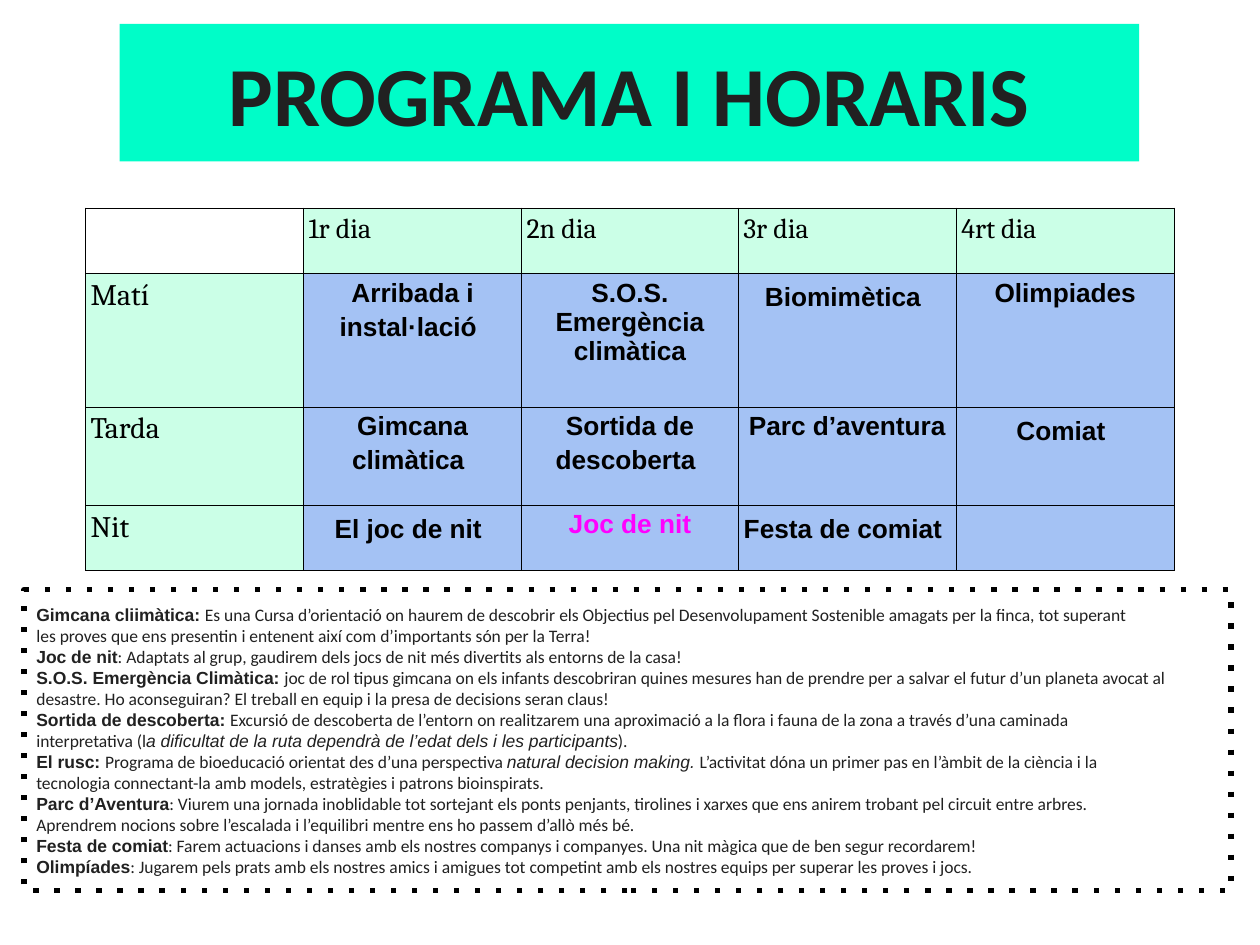
import pptx
import pptx.util
import pptx.dml.color
import pptx.enum.shapes
import pptx.enum.text
import pptx.oxml.ns
from lxml import etree

Inches = pptx.util.Inches
Pt = pptx.util.Pt
RGBColor = pptx.dml.color.RGBColor
PP_ALIGN = pptx.enum.text.PP_ALIGN
MSO_ANCHOR = pptx.enum.text.MSO_ANCHOR
RECTANGLE = pptx.enum.shapes.MSO_SHAPE.RECTANGLE
qn = pptx.oxml.ns.qn

BLACK = RGBColor(0x00, 0x00, 0x00)
INK = RGBColor(0x21, 0x21, 0x21)
TURQUOISE = RGBColor(0x00, 0xFD, 0xC8)
MINT = RGBColor(0xCB, 0xFF, 0xE7)
BLUE = RGBColor(0xA4, 0xC2, 0xF4)
MAGENTA = RGBColor(0xFF, 0x00, 0xFF)

DAYS = ["1r dia", "2n dia", "3r dia", "4rt dia"]
SCHEDULE = [
    ("Matí", ["Arribada i instal·lació ", "S.O.S. Emergència climàtica", "Biomimètica ", "Olimpiades"]),
    ("Tarda", ["Gimcana climàtica ", "Sortida de descoberta ", "Parc d’aventura", "Comiat "]),
    ("Nit", ["El joc de nit ", "Joc de nit", "Festa de comiat ", ""]),
]
HIGHLIGHT = "Joc de nit"
COLUMNS = [1.73, 1.73, 1.72, 1.73, 1.73]
ROWS = [0.52, 1.06, 0.78, 0.52]

LABEL, BODY, ITALIC = "label", "body", "italic"
DESCRIPTIONS = [
    [("Gimcana cliimàtica: ", LABEL),
     ("Es una Cursa d’orientació on haurem de descobrir els Objectius pel Desenvolupament Sostenible amagats per la finca, tot superant", BODY)],
    [("les proves que ens presentin i entenent així com d’importants són per la Terra!", BODY)],
    [("Joc de nit", LABEL),
     (": Adaptats al grup, gaudirem dels jocs de nit més divertits als entorns de la casa!", BODY)],
    [("S.O.S. Emergència Climàtica: ", LABEL),
     ("joc de rol tipus gimcana on els infants descobriran quines mesures han de prendre per a salvar el futur d’un planeta avocat al", BODY)],
    [("desastre. Ho aconseguiran? El treball en equip i la presa de decisions seran claus!", BODY)],
    [("Sortida de descoberta: ", LABEL),
     ("Excursió de descoberta de l’entorn on realitzarem una aproximació a la flora i fauna de la zona a través d’una caminada", BODY)],
    [("interpretativa (l", BODY),
     ("a dificultat de la ruta dependrà de l’edat dels i les participants", ITALIC),
     (").", BODY)],
    [("El rusc: ", LABEL),
     ("Programa de bioeducació orientat des d’una perspectiva ", BODY),
     ("natural decision making. ", ITALIC),
     ("L’activitat dóna un primer pas en l’àmbit de la ciència i la", BODY)],
    [("tecnologia connectant-la amb models, estratègies i patrons bioinspirats.", BODY)],
    [("Parc d’Aventura", LABEL),
     (": Viurem una jornada inoblidable tot sortejant els ponts penjants, tirolines i xarxes que ens anirem trobant pel circuit entre arbres.", BODY)],
    [("Aprendrem nocions sobre l’escalada i l’equilibri mentre ens ho passem d’allò més bé.", BODY)],
    [("Festa de comiat", LABEL),
     (": Farem actuacions i danses amb els nostres companys i companyes. Una nit màgica que de ben segur recordarem!", BODY)],
    [("Olimpíades", LABEL),
     (": Jugarem pels prats amb els nostres amics i amigues tot competint amb els nostres equips per superar les proves i jocs.", BODY)],
]


class ProgrammeSlide:
    heading_font = "Cambria"
    activity_font = "Arial"
    body_font = "Calibri"

    def __init__(self, prs):
        self.s = prs.slides.add_slide(prs.slide_layouts[6])

    def add_run(self, p, text, font, size, color, bold=False, italic=False):
        r = p.add_run()
        r.text = text
        r.font.name = font
        r.font.size = Pt(size)
        r.font.color.rgb = color
        r.font.bold = bold
        r.font.italic = italic

    def box(self, left, top, width, height):
        sp = self.s.shapes.add_shape(
            RECTANGLE, Inches(left), Inches(top), Inches(width), Inches(height))
        sp.shadow.inherit = False
        tf = sp.text_frame
        tf.word_wrap = True
        tf.margin_left = tf.margin_right = tf.margin_top = tf.margin_bottom = Inches(0.1)
        tf.vertical_anchor = MSO_ANCHOR.MIDDLE
        return sp

    def title(self, text, *place):
        sp = self.box(*place)
        sp.fill.solid()
        sp.fill.fore_color.rgb = TURQUOISE
        sp.line.fill.background()
        p = sp.text_frame.paragraphs[0]
        p.alignment = PP_ALIGN.CENTER
        self.add_run(p, text, self.body_font, 48, INK, bold=True)

    def descriptions(self, lines, *place):
        sp = self.box(*place)
        sp.fill.background()
        sp.line.color.rgb = BLACK
        sp.line.width = Pt(3)
        ln = sp._element.spPr.find(qn("a:ln"))
        etree.SubElement(ln, qn("a:prstDash"), val="dot")
        tf = sp.text_frame
        for i, line in enumerate(lines):
            p = tf.add_paragraph() if i else tf.paragraphs[0]
            p.alignment = PP_ALIGN.LEFT
            for text, kind in line:
                font = self.body_font if kind == BODY else self.activity_font
                self.add_run(p, text, font, 10, INK, kind == LABEL, kind == ITALIC)

    def borders(self, cell):
        tcPr = cell._tc.get_or_add_tcPr()
        for side in ("a:lnL", "a:lnR", "a:lnT", "a:lnB"):
            ln = etree.SubElement(tcPr, qn(side), w=str(Pt(0.5)))
            fill = etree.SubElement(ln, qn("a:solidFill"))
            etree.SubElement(fill, qn("a:srgbClr"), val=str(BLACK))

    def cell(self, cell, color=None):
        cell.margin_left = cell.margin_right = Inches(0.04)
        cell.margin_top = cell.margin_bottom = Inches(0.04)
        self.borders(cell)
        if color is None:
            cell.fill.background()
        else:
            cell.fill.solid()
            cell.fill.fore_color.rgb = color
        return cell.text_frame.paragraphs[0]

    def heading(self, cell, text, size):
        self.add_run(self.cell(cell, MINT), text, self.heading_font, size, BLACK)

    def activity(self, cell, text):
        p = self.cell(cell, BLUE)
        p.alignment = PP_ALIGN.CENTER
        name = text.rstrip()
        if name:
            color = MAGENTA if name == HIGHLIGHT else BLACK
            self.add_run(p, name, self.activity_font, 15, color, bold=True)
        if text != name:
            self.add_run(p, " ", self.activity_font, 18, BLACK, bold=True)

    def schedule(self, left, top):
        table = self.s.shapes.add_table(
            len(ROWS), len(COLUMNS), Inches(left), Inches(top),
            Inches(sum(COLUMNS)), Inches(sum(ROWS))).table
        table.first_row = table.horz_banding = False
        for column, width in zip(table.columns, COLUMNS):
            column.width = Inches(width)
        for row, height in zip(table.rows, ROWS):
            row.height = Inches(height)
        self.cell(table.cell(0, 0))
        for col, day in enumerate(DAYS, 1):
            self.heading(table.cell(0, col), day, 16)
        for row, (moment, activities) in enumerate(SCHEDULE, 1):
            self.heading(table.cell(row, 0), moment, 17)
            for col, text in enumerate(activities, 1):
                self.activity(table.cell(row, col), text)


def main():
    prs = pptx.Presentation()
    prs.slide_width = Inches(10)
    prs.slide_height = Inches(7.5)
    slide = ProgrammeSlide(prs)
    slide.schedule(0.68, 1.65)
    slide.descriptions(DESCRIPTIONS, 0.19, 4.68, 9.58, 2.39)
    slide.title("PROGRAMA I HORARIS", 0.95, 0.19, 8.09, 1.09)
    prs.save("out.pptx")


if __name__ == "__main__":
    main()
